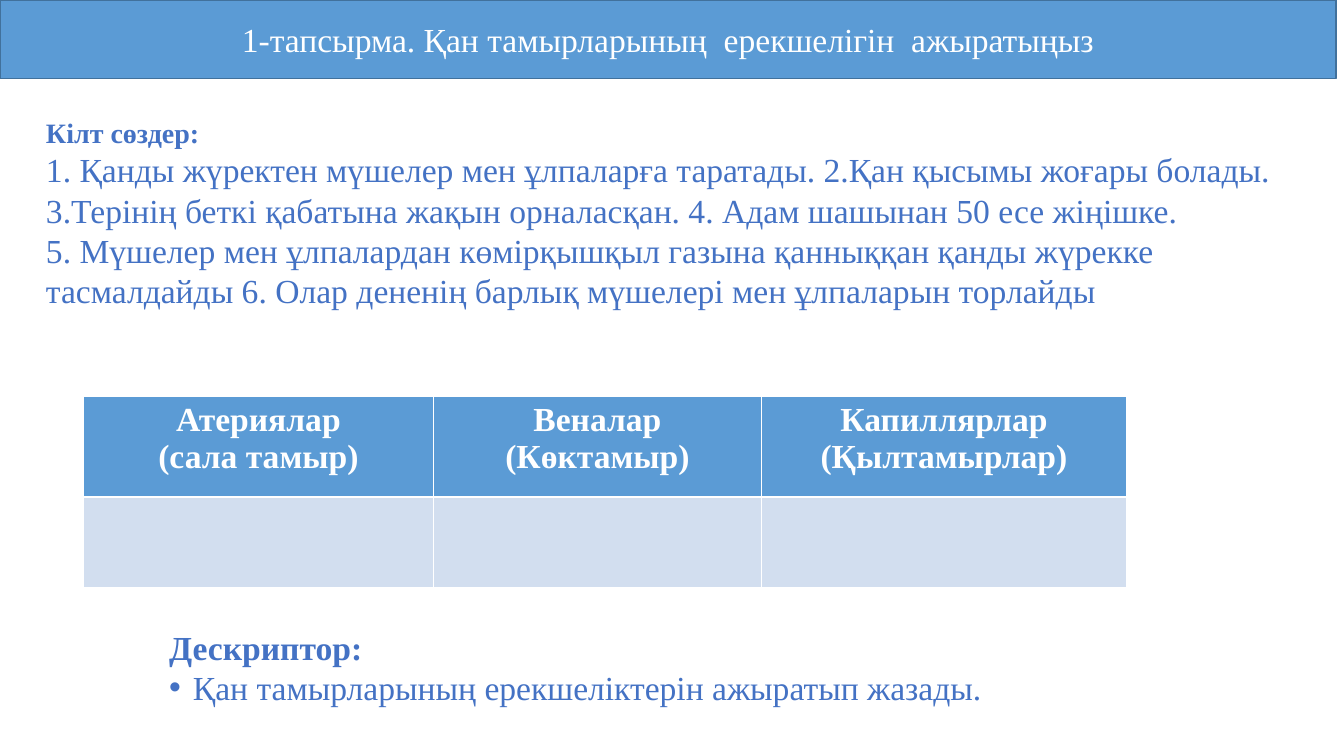
from dataclasses import dataclass

from lxml import etree
from pptx import Presentation
from pptx import util as u
from pptx.dml.color import RGBColor
from pptx.enum import text
from pptx.oxml.ns import qn


@dataclass(frozen=True)
class Theme:
    """Colours, font and type sizes of the slide."""
    font: str = "Times New Roman"
    white: RGBColor = RGBColor(0xFF, 0xFF, 0xFF)
    blue: RGBColor = RGBColor(0x5B, 0x9B, 0xD5)
    outline: RGBColor = RGBColor(0x41, 0x71, 0x9C)
    pale: RGBColor = RGBColor(0xD2, 0xDE, 0xEF)
    ink: RGBColor = RGBColor(0x44, 0x72, 0xC4)
    size: int = 24
    small: int = 20
    thin: float = 0.45
    thick: float = 1.47


THEME = Theme()

TITLE = "1-тапсырма. Қан тамырларының  ерекшелігін  ажыратыңыз"
KEYWORDS = [
    "Кілт сөздер:",
    "1. Қанды жүректен мүшелер мен ұлпаларға таратады. 2.Қан қысымы жоғары болады. "
    "3.Терінің беткі қабатына жақын орналасқан. 4. Адам шашынан 50 есе жіңішке.",
    "5. Мүшелер мен ұлпалардан көмірқышқыл газына қанныққан қанды жүрекке "
    "тасмалдайды 6. Олар дененің барлық мүшелері мен ұлпаларын торлайды",
]
VESSELS = ["Атериялар\n(сала тамыр)", "Веналар\n(Көктамыр)", "Капиллярлар (Қылтамырлар)"]
DESCRIPTOR = ["Дескриптор:", "Қан тамырларының ерекшеліктерін ажыратып жазады."]


def place(shape, box):
    """Move a shape to a box of left, top, width and height in centimetres."""
    shape.left, shape.top, shape.width, shape.height = map(u.Cm, box)


def style(para, color, size=THEME.size, bold=False, align=text.PP_ALIGN.LEFT):
    """Format one paragraph."""
    para.alignment = align
    para.space_before = u.Pt(0)
    para.font.name = THEME.font
    para.font.size = u.Pt(size)
    para.font.bold = bold
    para.font.color.rgb = color


def write_lines(frame, lines, heading_size):
    """Write a bold heading followed by plain paragraphs."""
    frame.word_wrap = True
    frame.auto_size = text.MSO_AUTO_SIZE.NONE
    frame.vertical_anchor = text.MSO_ANCHOR.TOP
    frame.text = "\n".join(lines)
    heading, *rest = frame.paragraphs
    style(heading, THEME.ink, heading_size, bold=True)
    for para in rest:
        style(para, THEME.ink)


def set_bullet(para, indent, char=None):
    """Give a paragraph a hanging bullet, or none."""
    props = para._p.get_or_add_pPr()
    props.set("marL", str(u.Cm(indent)))
    props.set("indent", str(-u.Cm(indent)))
    if char:
        font = etree.Element(qn("a:buFont"), typeface="Arial")
        bullet = etree.Element(qn("a:buChar"), char=char)
        props.extend([font, bullet])
    else:
        props.append(etree.Element(qn("a:buNone")))


def set_borders(cell, **widths):
    """Draw white cell borders with the given widths in points."""
    props = cell._tc.get_or_add_tcPr()
    for index, (side, width) in enumerate(widths.items()):
        line = etree.Element(qn(f"a:ln{side}"), w=str(u.Pt(width)))
        fill = etree.SubElement(line, qn("a:solidFill"))
        etree.SubElement(fill, qn("a:srgbClr"), val=str(THEME.white))
        props.insert(index, line)


def add_banner(page, box):
    """Turn the title placeholder into the blue banner."""
    banner = page.shapes.title
    place(banner, box)
    banner.fill.solid()
    banner.fill.fore_color.rgb = THEME.blue
    banner.line.color.rgb = THEME.outline
    banner.line.width = u.Pt(1)
    frame = banner.text_frame
    frame.text = TITLE
    frame.auto_size = text.MSO_AUTO_SIZE.NONE
    frame.vertical_anchor = text.MSO_ANCHOR.MIDDLE
    style(frame.paragraphs[0], THEME.white, align=text.PP_ALIGN.CENTER)


def add_keywords(page, box):
    """Add the list of key phrases."""
    keywords = page.shapes.add_textbox(*map(u.Cm, box))
    write_lines(keywords.text_frame, KEYWORDS, THEME.small)


def add_vessel_table(page, box, columns, rows):
    """Add the table to be filled in, with one column per vessel type."""
    table = page.shapes.add_table(len(rows), len(columns), *map(u.Cm, box)).table
    for column, width in zip(table.columns, columns):
        column.width = u.Cm(width)
    for row, height in zip(table.rows, rows):
        row.height = u.Cm(height)
    for index, vessel in enumerate(VESSELS):
        header, answer = table.cell(0, index), table.cell(1, index)
        header.text = vessel
        for para in header.text_frame.paragraphs:
            style(para, THEME.white, bold=True, align=text.PP_ALIGN.CENTER)
        for cell, color in ((header, THEME.blue), (answer, THEME.pale)):
            cell.fill.solid()
            cell.fill.fore_color.rgb = color
        set_borders(header, L=THEME.thin, R=THEME.thin, T=THEME.thin, B=THEME.thick)
        set_borders(answer, L=THEME.thin, R=THEME.thin, T=THEME.thick, B=THEME.thin)


def add_descriptor(page, box):
    """Fill the body placeholder with the descriptor list."""
    body = page.placeholders[1]
    place(body, box)
    frame = body.text_frame
    frame.text = "\n".join(DESCRIPTOR)
    write_lines(frame, DESCRIPTOR, THEME.size)
    heading, item = frame.paragraphs
    set_bullet(heading, 0)
    set_bullet(item, 0.6, "•")


def main():
    """Build the slide and save the deck."""
    deck = Presentation()
    deck.slide_width, deck.slide_height = u.Cm(33.88), u.Cm(19.05)
    page = deck.slides.add_slide(deck.slide_layouts[1])
    add_banner(page, (0, 0, 33.68, 1.98))
    add_vessel_table(page, (2.11, 9.98, 26.28, 4.83), (8.81, 8.28, 9.19), (2.54, 2.29))
    add_keywords(page, (0.91, 2.79, 31.75, 6.2))
    add_descriptor(page, (4.01, 15.67, 24.16, 2.29))
    deck.save("out.pptx")


if __name__ == "__main__":
    main()
